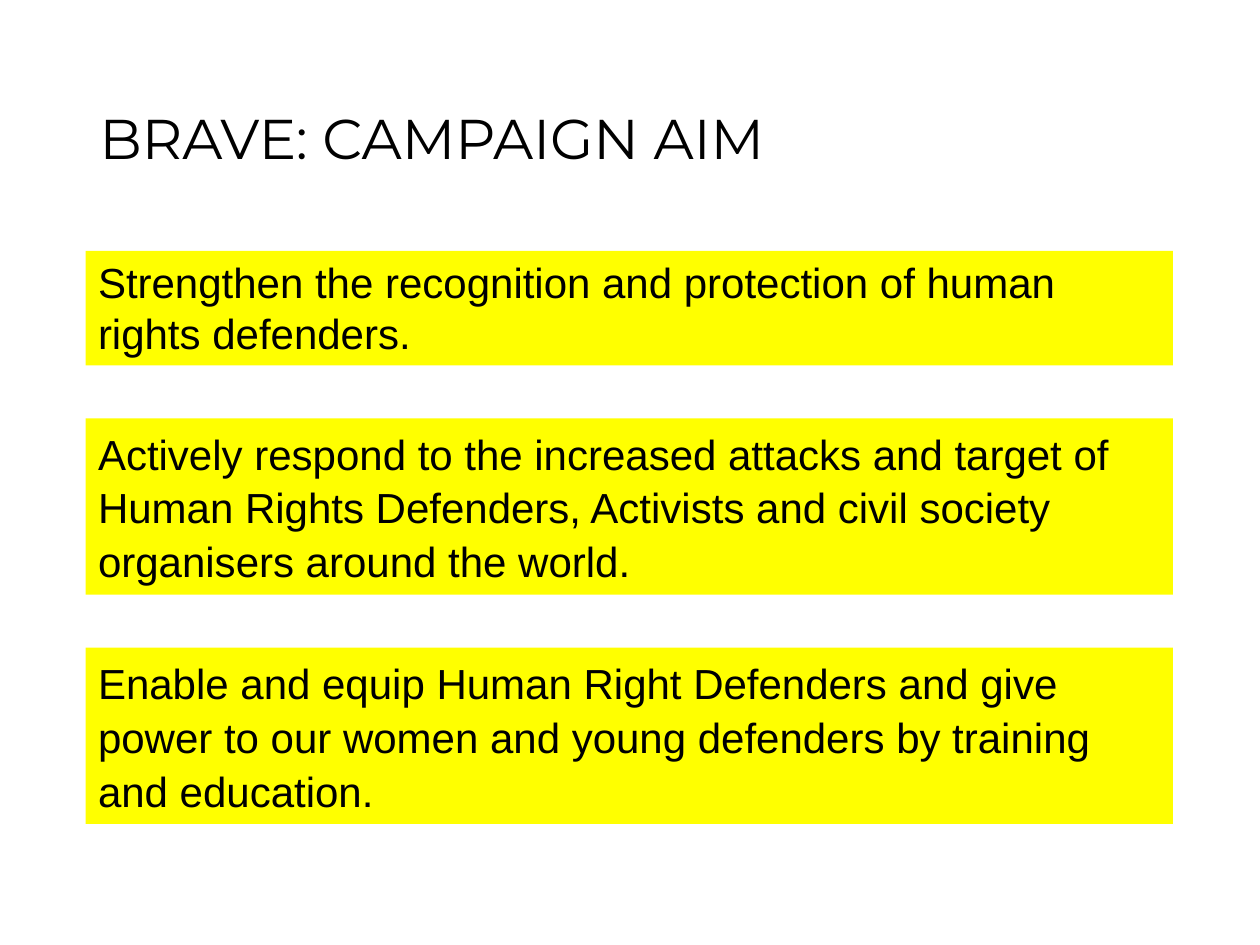
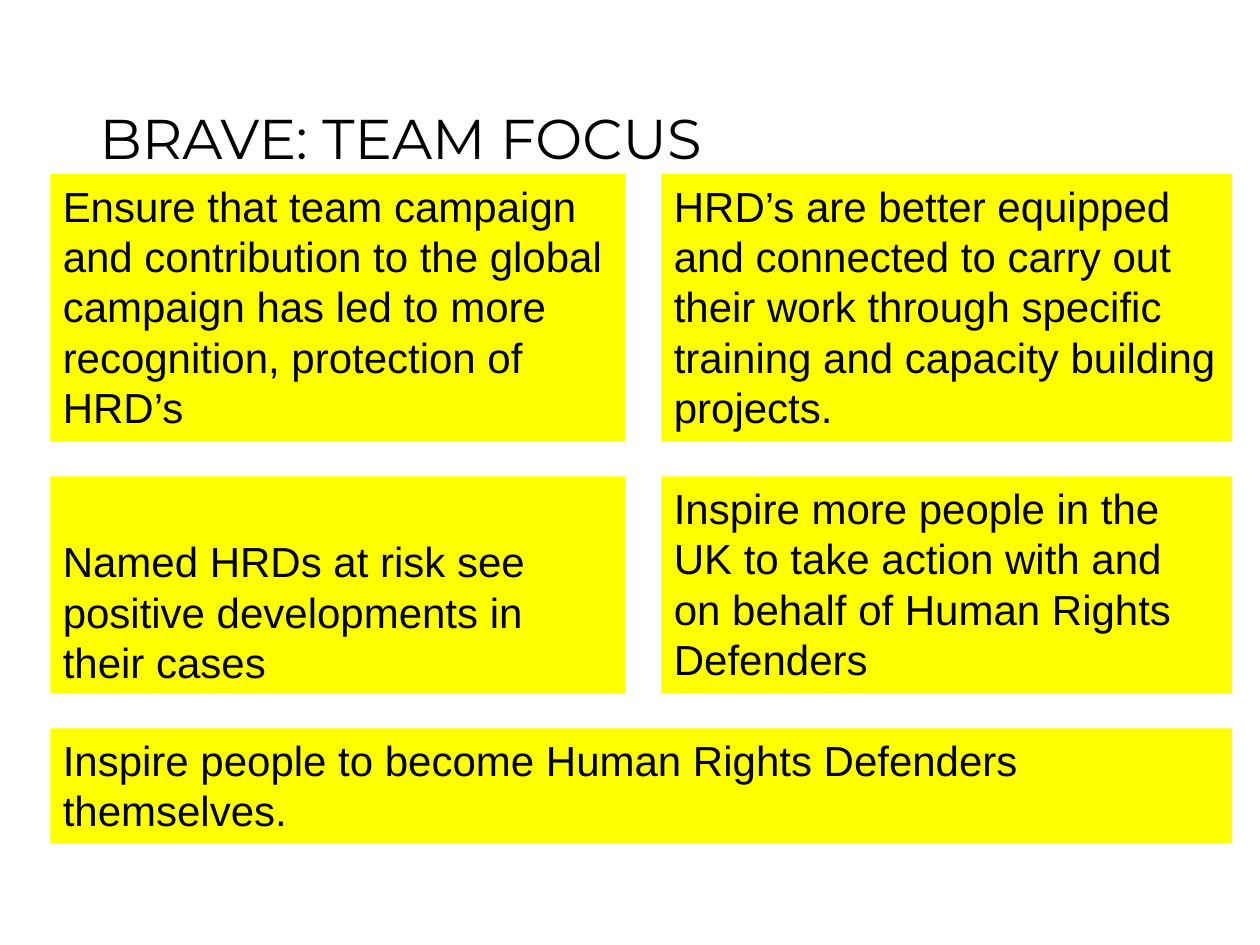
from pptx import Presentation
from pptx.dml.color import RGBColor
from pptx.enum.shapes import MSO_SHAPE
from pptx.enum.text import MSO_ANCHOR, MSO_AUTO_SIZE, PP_ALIGN
from pptx.util import Inches, Pt

RECTANGLE = MSO_SHAPE.RECTANGLE
TOP, MIDDLE, BOTTOM = MSO_ANCHOR.TOP, MSO_ANCHOR.MIDDLE, MSO_ANCHOR.BOTTOM
LEFT = PP_ALIGN.LEFT
NO_AUTOFIT = MSO_AUTO_SIZE.NONE

BLACK = RGBColor(0x00, 0x00, 0x00)
YELLOW = RGBColor(0xFF, 0xFF, 0x00)
TITLE_FONT, BODY_FONT = "Montserrat", "Arial"
TITLE_ONLY = 5

# Content: each row is a height and its boxes of (text, format)
LOOSE = {"line_spacing": 1.07, "space_after": 2}
SLIDES = [
    {
        "title": "BRAVE: CAMPAIGN AIM",
        "left": 0.68, "top": 1.99, "gap": 0.42, "widths": [8.63],
        "rows": [
            (0.91, [("Strengthen the recognition and protection of human "
                     "rights defenders.", {})]),
            (1.4, [("Actively respond to the increased attacks and target of "
                    "Human Rights Defenders, Activists and civil society "
                    "organisers around the world.", LOOSE)]),
            (1.4, [("Enable and equip Human Right Defenders and give power to "
                    "our women and young defenders by training and "
                    "education.", LOOSE)]),
        ],
    },
    {
        "title": "BRAVE: TEAM FOCUS",
        "left": 0.4, "top": 1.38, "gap": 0.28, "widths": [4.56, 4.53],
        "rows": [
            (2.12, [("Ensure that team campaign and contribution to the global "
                     "campaign has led to more recognition, protection of "
                     "HRD’s", {}),
                    ("HRD’s are better equipped and connected to carry out "
                     "their work through specific training and capacity "
                     "building projects.", {})]),
            (1.72, [("Named HRDs at risk see positive developments in their "
                     "cases", {"anchor": BOTTOM}),
                    ("Inspire more people in the UK to take action with and "
                     "on behalf of Human Rights Defenders", {})]),
            (0.91, [("Inspire people to become Human Rights Defenders "
                     "themselves.", {})]),
        ],
    },
]
COLUMN_GAP = 0.29


def write_text(shape, text, font=BODY_FONT, size=24, anchor=TOP,
               line_spacing=1.0, space_after=0):
    frame = shape.text_frame
    frame.word_wrap = True
    frame.auto_size = NO_AUTOFIT
    frame.vertical_anchor = anchor
    para = frame.paragraphs[0]
    para.alignment = LEFT
    para.line_spacing = line_spacing
    para.space_before = Pt(0)
    para.space_after = Pt(space_after)
    span = para.add_run()
    span.text = text
    span.font.name = font
    span.font.size = Pt(size)
    span.font.color.rgb = BLACK


def add_title(page, text):
    title = page.shapes.title
    title.left, title.top = Inches(0.69), Inches(0.4)
    title.width, title.height = Inches(8.62), Inches(1.45)
    write_text(title, text, font=TITLE_FONT, size=32, anchor=MIDDLE,
               line_spacing=0.9)


def add_box(page, left, top, width, height, text, **text_format):
    box = page.shapes.add_shape(RECTANGLE, Inches(left), Inches(top),
                                Inches(width), Inches(height))
    box.shadow.inherit = False
    box.fill.solid()
    box.fill.fore_color.rgb = YELLOW
    box.line.fill.background()
    write_text(box, text, **text_format)


def add_rows(page, content):
    full_width = sum(content["widths"]) + COLUMN_GAP * (len(content["widths"]) - 1)
    top = content["top"]
    for height, boxes in content["rows"]:
        # A lone box spans every column
        widths = content["widths"] if len(boxes) > 1 else [full_width]
        left = content["left"]
        for width, (text, text_format) in zip(widths, boxes):
            add_box(page, left, top, width, height, text, **text_format)
            left += width + COLUMN_GAP
        top += height + content["gap"]


def main():
    deck = Presentation()
    deck.slide_width, deck.slide_height = Inches(10), Inches(7.5)
    for content in SLIDES:
        page = deck.slides.add_slide(deck.slide_layouts[TITLE_ONLY])
        add_title(page, content["title"])
        add_rows(page, content)
    deck.save("out.pptx")


if __name__ == "__main__":
    main()
